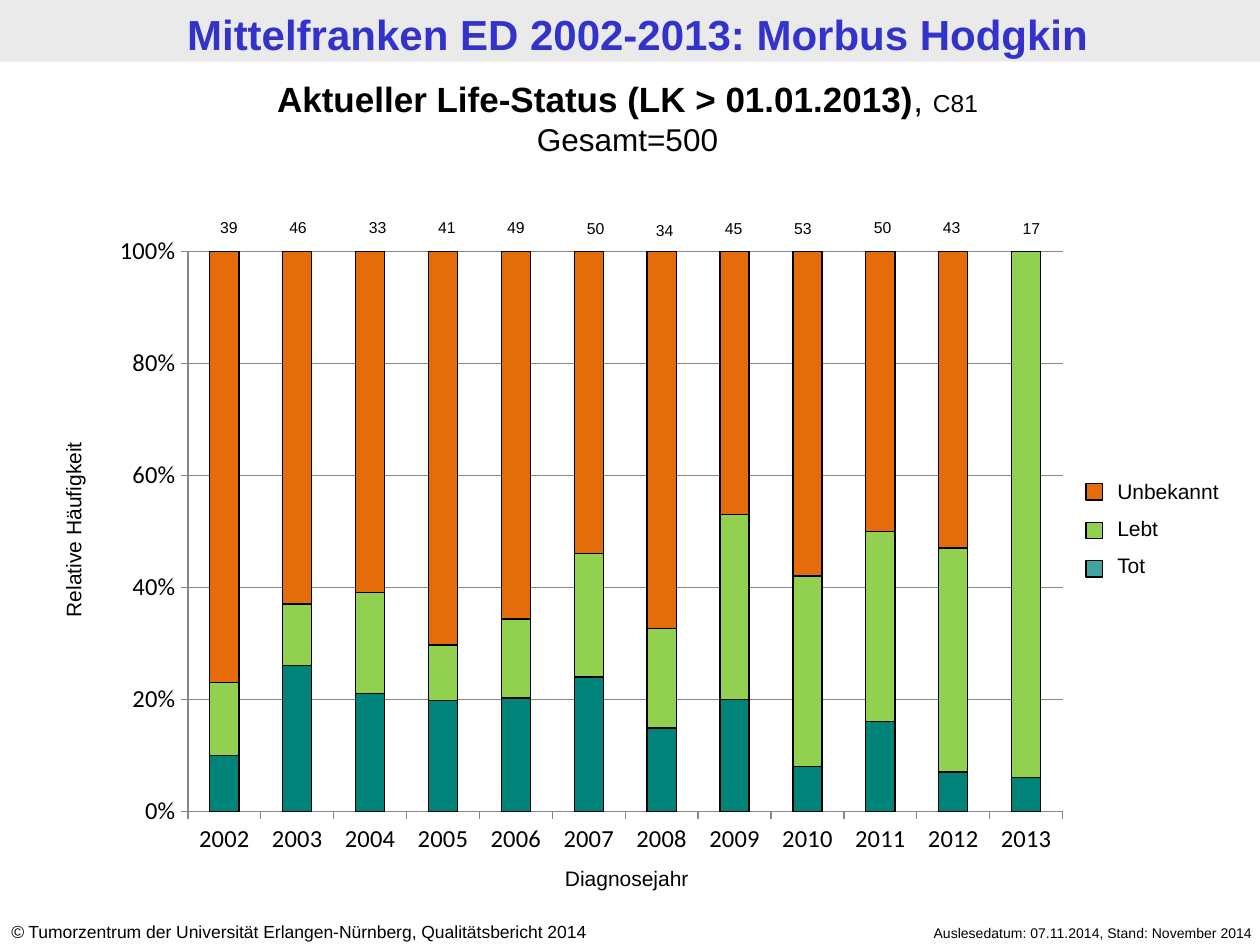
from pptx import Presentation
from pptx.chart.data import CategoryChartData
from pptx.dml.color import RGBColor
from pptx.enum.chart import XL_CHART_TYPE as ChartType, XL_TICK_MARK as TickMark
from pptx.enum.shapes import MSO_SHAPE as Shape
from pptx.enum.text import MSO_ANCHOR as Anchor, MSO_AUTO_SIZE as AutoSize, PP_ALIGN as Align
from pptx.oxml import parse_xml
from pptx.oxml.ns import nsdecls
from pptx.util import Pt


def color(hex_code):
    return RGBColor.from_string(hex_code)


def write(para, text, size, bold=False, italic=False, ink="000000", align=Align.LEFT):
    """Append formatted text to a paragraph and align the paragraph."""
    para.alignment = align
    span = para.add_run()
    span.text = text
    span.font.name = "Arial"
    span.font.size = Pt(size)
    span.font.bold = bold
    span.font.italic = italic
    span.font.color.rgb = color(ink)


deck = Presentation()
deck.slide_width, deck.slide_height = Pt(720), Pt(540)
page = deck.slides.add_slide(deck.slide_layouts[5])

# Title on its grey band
band = page.shapes.add_shape(Shape.RECTANGLE, 0, 0, Pt(720), Pt(35.3))
band.shadow.inherit = False
band.fill.solid()
band.fill.fore_color.rgb = color("EAEAEA")
band.line.fill.background()
title = page.shapes.title
title.left, title.top, title.width, title.height = Pt(4.3), Pt(1.5), Pt(720), Pt(35.3)
frame = title.text_frame
frame.auto_size = AutoSize.NONE
frame.vertical_anchor = Anchor.MIDDLE
write(frame.paragraphs[0], "Mittelfranken ED 2002-2013: Morbus Hodgkin", 24,
      bold=True, ink="3333CC", align=Align.CENTER)
tree = page.shapes._spTree
tree.remove(band._element)
tree.insert(2, band._element)  # behind the title

# Chart
years = [str(year) for year in range(2002, 2014)]
statuses = [
    ("Tot", "008378", (10, 26, 21, 20, 20, 24, 15, 20, 8, 16, 7, 6)),
    ("Lebt", "92D050", (13, 11, 18, 10, 14, 22, 18, 33, 34, 34, 40, 94)),
    ("Unbekannt", "E46C0A", (77, 63, 61, 71, 65, 54, 68, 47, 58, 50, 53, 0)),
]
data = CategoryChartData()
data.categories = years
for name, _, values in statuses:
    data.add_series(name, values)
chart = page.shapes.add_chart(ChartType.COLUMN_STACKED_100, Pt(56.9), Pt(128.9),
                              Pt(561.6), Pt(367.9), data).chart
chart.has_title = False
chart.has_legend = False
chart.font.name = "Calibri"
chart.font.size = Pt(14)
chart.font.color.rgb = color("000000")
plot = chart.plots[0]
plot.gap_width = 150
plot.overlap = 100
plot.vary_by_categories = False
for series, (_, fill, _) in zip(plot.series, statuses):
    series.format.fill.solid()
    series.format.fill.fore_color.rgb = color(fill)
    series.format.line.color.rgb = color("000000")
    series.format.line.width = Pt(0.75)

scale = chart.value_axis
scale.minimum_scale, scale.maximum_scale, scale.major_unit = 0, 1, 0.2
scale.has_major_gridlines = True
scale.tick_labels.number_format = "0%"
scale.tick_labels.number_format_is_linked = False
for axis in (scale, chart.category_axis):
    axis.major_tick_mark = TickMark.OUTSIDE
    axis.minor_tick_mark = TickMark.NONE
for item in (scale, chart.category_axis, scale.major_gridlines):
    item.format.line.color.rgb = color("868686")
    item.format.line.width = Pt(0.75)

area = chart._chartSpace.chart.plotArea
for old in area.findall("{*}layout"):
    area.remove(old)
area.insert(0, parse_xml(
    f'<c:layout {nsdecls("c")}><c:manualLayout><c:layoutTarget val="inner"/>'
    '<c:xMode val="edge"/><c:yMode val="edge"/><c:x val="0.09"/><c:y val="0.04"/>'
    '<c:w val="0.89"/><c:h val="0.87"/></c:manualLayout></c:layout>'))

# Single-line labels: text, left, top, width, height, size, alignment, rotation
labels = [
    ("Auslesedatum: 07.11.2014, Stand: November 2014", 478.8, 524.9, 244, 17, 8, Align.RIGHT, 0),
    ("Relative Häufigkeit", -44.6, 291.6, 173.5, 22.3, 12, Align.CENTER, 270),
    ("Diagnosejahr", 277.2, 491, 162, 22.3, 12, Align.CENTER, 0),
]
# Cases per year: count, left, top
cases = [
    (39, 111, 121), (46, 150.5, 121), (33, 196, 121), (41, 235.5, 121),
    (49, 275, 121), (50, 320.5, 121.5), (34, 360, 122.5), (45, 399.5, 121.5),
    (53, 439, 121.5), (50, 484.5, 121), (43, 524, 121), (17, 569.5, 121.5),
]
labels += [(str(count), left, top, 39.6, 18, 9, Align.CENTER, 0) for count, left, top in cases]
for text, left, top, width, height, size, align, rotation in labels:
    box = page.shapes.add_textbox(Pt(left), Pt(top), Pt(width), Pt(height))
    box.rotation = rotation
    box.text_frame.word_wrap = True
    write(box.text_frame.paragraphs[0], text, size, align=align)

# Subtitle
box = page.shapes.add_textbox(Pt(-2.9), Pt(41), Pt(723), Pt(53.3))
box.text_frame.word_wrap = True
para = box.text_frame.paragraphs[0]
write(para, "Aktueller Life-Status (LK > 01.01.2013)", 20, bold=True, align=Align.CENTER)
write(para, ", ", 20, align=Align.CENTER)
write(para, "C81", 14, align=Align.CENTER)
write(box.text_frame.add_paragraph(), "Gesamt=500", 18, align=Align.CENTER)

# Copyright
box = page.shapes.add_textbox(Pt(-0.7), Pt(522.7), Pt(377.3), Pt(19.4))
box.text_frame.word_wrap = True
para = box.text_frame.paragraphs[0]
write(para, "©", 10, italic=True)
write(para, " Tumorzentrum der Universität Erlangen-Nürnberg, Qualitätsbericht 2014", 10)

# Legend
box = page.shapes.add_textbox(Pt(631.4), Pt(270), Pt(88.6), Pt(65.5))
box.text_frame.word_wrap = True
for row, (name, fill, _) in enumerate(reversed(statuses)):
    para = box.text_frame.add_paragraph() if row else box.text_frame.paragraphs[0]
    if row:
        para.space_before = Pt(6.8)
    write(para, name, 12)
    key = page.shapes.add_shape(Shape.RECTANGLE, Pt(620.6), Pt(276.4 + 22 * row), Pt(9.4), Pt(9.4))
    key.shadow.inherit = False
    key.fill.solid()
    key.fill.fore_color.rgb = color("008380" if name == "Tot" else fill)
    if name == "Tot":
        key.fill._xPr.find(".//{*}srgbClr").append(
            parse_xml(f'<a:alpha {nsdecls("a")} val="74000"/>'))
    key.line.color.rgb = color("000000")
    key.line.width = Pt(0.75)

deck.save("out.pptx")
